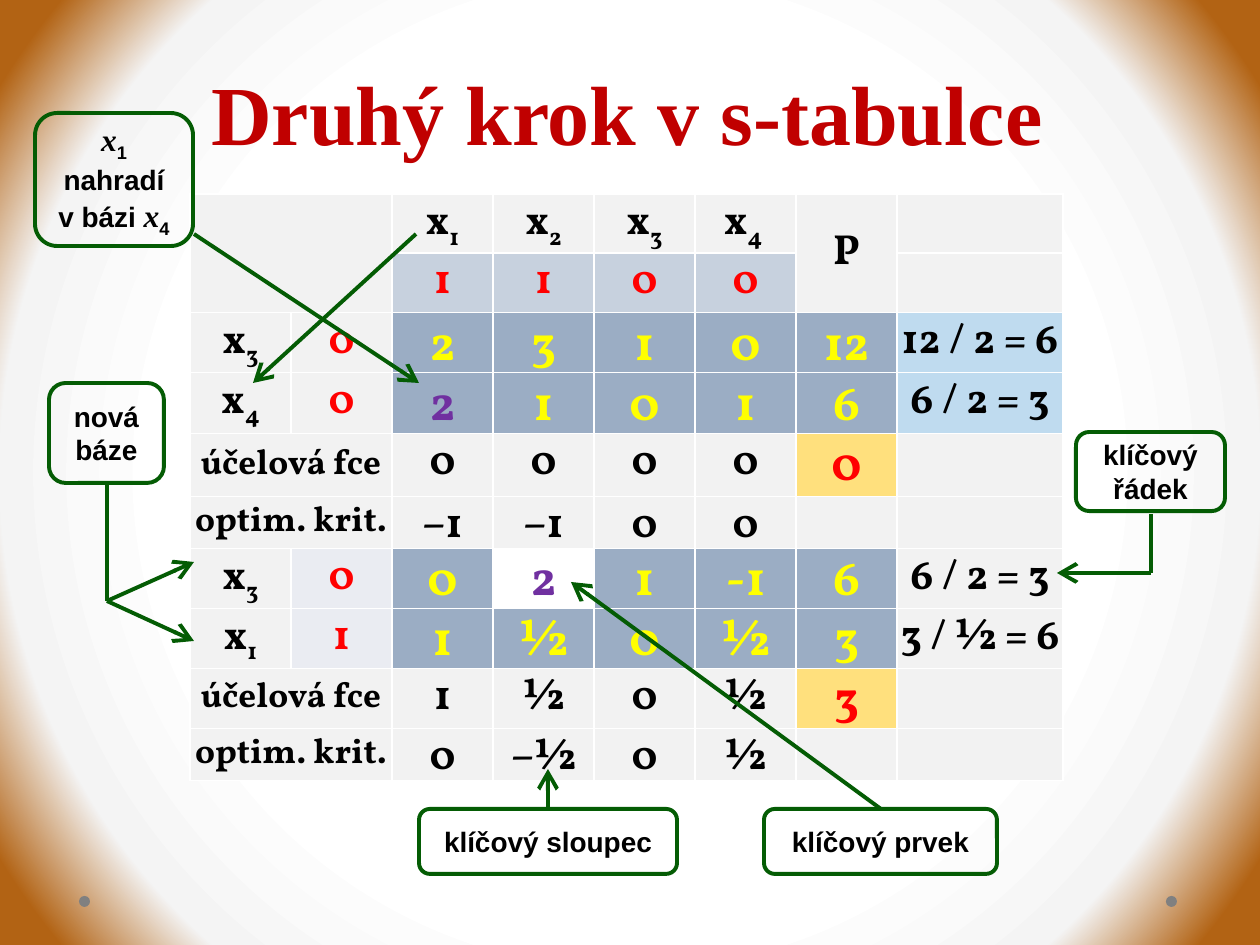
from typing import NamedTuple

from pptx import Presentation
from pptx.dml.color import RGBColor
from pptx.enum.shapes import MSO_CONNECTOR as Connector, MSO_SHAPE as Shape
from pptx.enum.text import MSO_ANCHOR as Anchor, MSO_AUTO_SIZE as AutoSize, PP_ALIGN as Align
from pptx.oxml import parse_xml
from pptx.oxml.ns import nsdecls
from pptx.util import Emu, Pt

PX = 914400 / 126
GREEN, BLACK, RED, YELLOW, PURPLE = "045C04", "000000", "FF0000", "FFFF00", "7030A0"
GREY, STEEL, PALE_STEEL, LILAC, SKY, GOLD = "F2F2F2", "9BADC4", "C7D1DE", "EAECF2", "BFDBEF", "FFE07D"
COLUMN_WIDTHS = [101] * 7 + [166]
ROW_HEIGHTS = [59, 52, 60, 61, 63, 52, 60, 60, 60, 52]
MERGES = [((0, 0), (1, 1)), ((0, 6), (1, 6))] + [((row, 0), (row, 1)) for row in (4, 5, 8, 9)]
GRADIENT = [(0, "FFFFFF"), (59, "FFFFFF"), (80, "F4F4F4"), (94, "B26314"), (100, "B26314")]


class Span(NamedTuple):
    text: str
    size: int = 16
    font: str = "Arial"
    italic: bool = False
    subscript: bool = False


class Cell(NamedTuple):
    text: str = ""
    size: int = 24
    color: str = BLACK
    fill: str = GREY


class Callout(NamedTuple):
    box: tuple[int, int, int, int]
    spans: list[Span]


class Line(NamedTuple):
    start: tuple[int, int]
    end: tuple[int, int]
    arrow: bool = True


def basis_row(variable: str, price: str, values: str, ratio: str,
              price_fill: str = GREY, ratio_fill: str = GREY) -> list[Cell]:
    """Describe a row of one basis variable."""
    body = [Cell(value, 28, YELLOW, STEEL) for value in values.split()]
    return [Cell(variable), Cell(price, 24, RED, price_fill), *body, Cell(ratio, fill=ratio_fill)]


def summary_row(label: str, values: str, total: str = "") -> list[Cell]:
    """Describe a row with a label across the first two columns."""
    result = Cell(total, 28, RED, GOLD) if total else Cell()
    return [Cell(label, 20), Cell(), *map(Cell, values.split()), result, Cell()]


def tableau() -> list[list[Cell]]:
    """Describe every row of the simplex table."""
    variables = ["x_1", "x_2", "x_3", "x_4 "]
    rows = [
        [Cell(), Cell(), *map(Cell, variables), Cell("P"), Cell()],
        [Cell(), Cell(), *[Cell(price, 24, RED, PALE_STEEL) for price in "1100"], Cell(), Cell()],
        basis_row("x_3", "0", "2 3 1 0 12", "12 / 2 = 6", ratio_fill=SKY),
        basis_row("x_4", "0", "2 1 0 1 6", "6 / 2 = 3", ratio_fill=SKY),
        summary_row("účelová fce", "0 0 0 0", "0"),
        summary_row("optim. krit.", "‒1 ‒1 0 0"),
        basis_row("x_3", "0", "0 2 1 -1 6", "6 / 2 = 3", LILAC),
        basis_row("x_1", "1", "1 ½ 0 ½ 3", "3 / ½ = 6", LILAC),
        summary_row("účelová fce", "1 ½ 0 ½", "3"),
        summary_row("optim. krit.", "0 ‒½ 0 ½"),
    ]
    rows[3][2] = Cell("2", 28, PURPLE, STEEL)
    rows[6][3] = Cell("2", 28, PURPLE, "")
    return rows


CALLOUTS = [
    Callout((49, 383, 115, 100), [Span("nová báze")]),
    Callout((419, 809, 258, 65), [Span("klíčový sloupec")]),
    Callout((1076, 432, 149, 79), [Span("klíčový řádek")]),
    Callout((764, 809, 233, 65), [Span("klíčový prvek")]),
    Callout((35, 113, 158, 133), [
        Span("x", 18, "Times New Roman", True), Span("1", 18, subscript=True),
        Span(" nahradí v bázi "),
        Span("x", 18, "Times New Roman", True), Span("4", 18, subscript=True)]),
]
LINES = [
    Line((107, 483), (107, 601), False),
    Line((107, 601), (194, 562)),
    Line((107, 601), (194, 641)),
    Line((548, 809), (548, 769)),
    Line((1151, 514), (1151, 573), False),
    Line((1151, 573), (1057, 573)),
    Line((881, 809), (571, 582)),
    Line((194, 234), (419, 383)),
    Line((416, 234), (253, 383)),
]


def px(*lengths: int) -> list[Emu]:
    """Turn pixel lengths into EMU."""
    return [Emu(round(length * PX)) for length in lengths]


def rgb(color: str) -> RGBColor:
    """Turn a hex string into a colour."""
    return RGBColor.from_string(color)


def write_spans(para, spans: list[Span], color: str) -> None:
    """Write centred bold spans into a paragraph."""
    para.alignment = Align.CENTER
    for span in spans:
        run = para.add_run()
        run.text = span.text
        run.font.size, run.font.name = Pt(span.size), span.font
        run.font.bold, run.font.italic = True, span.italic
        run.font.color.rgb = rgb(color)
        if span.subscript:
            run.font._element.set("baseline", "-25000")


def paint_background(page) -> None:
    """Give the page its circular gradient."""
    stops = "".join(f'<a:gs pos="{place * 1000}"><a:srgbClr val="{color}"/></a:gs>'
                    for place, color in GRADIENT)
    page.element.cSld.insert(0, parse_xml(
        f'<p:bg {nsdecls("p", "a")}><p:bgPr><a:gradFill rotWithShape="1"><a:gsLst>{stops}</a:gsLst>'
        '<a:path path="circle"><a:fillToRect l="50000" t="50000" r="50000" b="50000"/></a:path>'
        '</a:gradFill><a:effectLst/></p:bgPr></p:bg>'))


def draw_dot(page, left: int) -> None:
    """Draw a small grey footer dot."""
    dot = page.shapes.add_shape(Shape.OVAL, *px(left, 896, 11, 11))
    dot.shadow.inherit = False
    dot.fill.solid()
    dot.fill.fore_color.rgb = rgb("808080")
    dot.line.fill.background()


def fill_title(page, text: str) -> None:
    """Place and format the title."""
    title = page.shapes.title
    title.left, title.top, title.width, title.height = px(121, 54, 1012, 115)
    frame = title.text_frame
    frame.auto_size, frame.vertical_anchor = AutoSize.NONE, Anchor.MIDDLE
    write_spans(frame.paragraphs[0], [Span(text, 48, "Times New Roman")], "C00000")


def fill_cell(target, cell: Cell) -> None:
    """Write one table cell, letting its line reach below the row."""
    target.vertical_anchor = Anchor.TOP
    target.margin_left, target.margin_top, target.margin_right, target.margin_bottom = px(1, 1, 1, -10)
    if cell.fill:
        target.fill.solid()
        target.fill.fore_color.rgb = rgb(cell.fill)
    else:
        target.fill.background()
    properties = target._tc.get_or_add_tcPr()
    for index, side in enumerate(("lnL", "lnR", "lnT", "lnB")):
        properties.insert(index, parse_xml(
            f'<a:{side} {nsdecls("a")} w="12700"><a:solidFill><a:srgbClr val="FFFFFF"/>'
            f'</a:solidFill></a:{side}>'))
    if cell.text:
        spans = [Span(part, cell.size, "Vollkorn", subscript=index > 0)
                 for index, part in enumerate(cell.text.split("_"))]
        write_spans(target.text_frame.paragraphs[0], spans, cell.color)


def draw_table(page) -> None:
    """Draw the simplex table."""
    box = px(190, 194, sum(COLUMN_WIDTHS), sum(ROW_HEIGHTS))
    table = page.shapes.add_table(len(ROW_HEIGHTS), len(COLUMN_WIDTHS), *box).table
    table.first_row = table.horz_banding = False
    for column, width in zip(table.columns, px(*COLUMN_WIDTHS)):
        column.width = width
    for row, height in zip(table.rows, px(*ROW_HEIGHTS)):
        row.height = height
    for row, cells in zip(table.rows, tableau()):
        for target, cell in zip(row.cells, cells):
            fill_cell(target, cell)
    for first, last in MERGES:
        merged = table.cell(*first)
        merged.merge(table.cell(*last))
        merged.vertical_anchor, merged.margin_bottom = Anchor.MIDDLE, 0


def draw_callout(page, callout: Callout) -> None:
    """Draw a rounded green frame with its text."""
    box = page.shapes.add_shape(Shape.ROUNDED_RECTANGLE, *px(*callout.box))
    box.shadow.inherit = False
    box.fill.background()
    box.line.color.rgb, box.line.width = rgb(GREEN), Pt(2.25)
    box.text_frame.word_wrap, box.text_frame.vertical_anchor = True, Anchor.MIDDLE
    write_spans(box.text_frame.paragraphs[0], callout.spans, BLACK)


def draw_line(page, line: Line) -> None:
    """Draw a green line, with an arrowhead at its end if asked."""
    link = page.shapes.add_connector(Connector.STRAIGHT, *px(*line.start, *line.end))
    link.line.color.rgb, link.line.width = rgb(GREEN), Pt(2.25)
    if line.arrow:
        link.line._get_or_add_ln().append(
            parse_xml(f'<a:tailEnd {nsdecls("a")} type="arrow" w="lg" len="lg"/>'))
    link._element.spPr.append(parse_xml(f'<a:effectLst {nsdecls("a")}/>'))


def main() -> None:
    """Build and save the deck."""
    deck = Presentation()
    deck.slide_width, deck.slide_height = px(1260, 945)
    page = deck.slides.add_slide(deck.slide_layouts[5])
    paint_background(page)
    for left in (1166, 79):
        draw_dot(page, left)
    fill_title(page, "Druhý krok v s-tabulce")
    draw_table(page)
    for callout in CALLOUTS:
        draw_callout(page, callout)
    for line in LINES:
        draw_line(page, line)
    deck.save("out.pptx")


if __name__ == "__main__":
    main()
